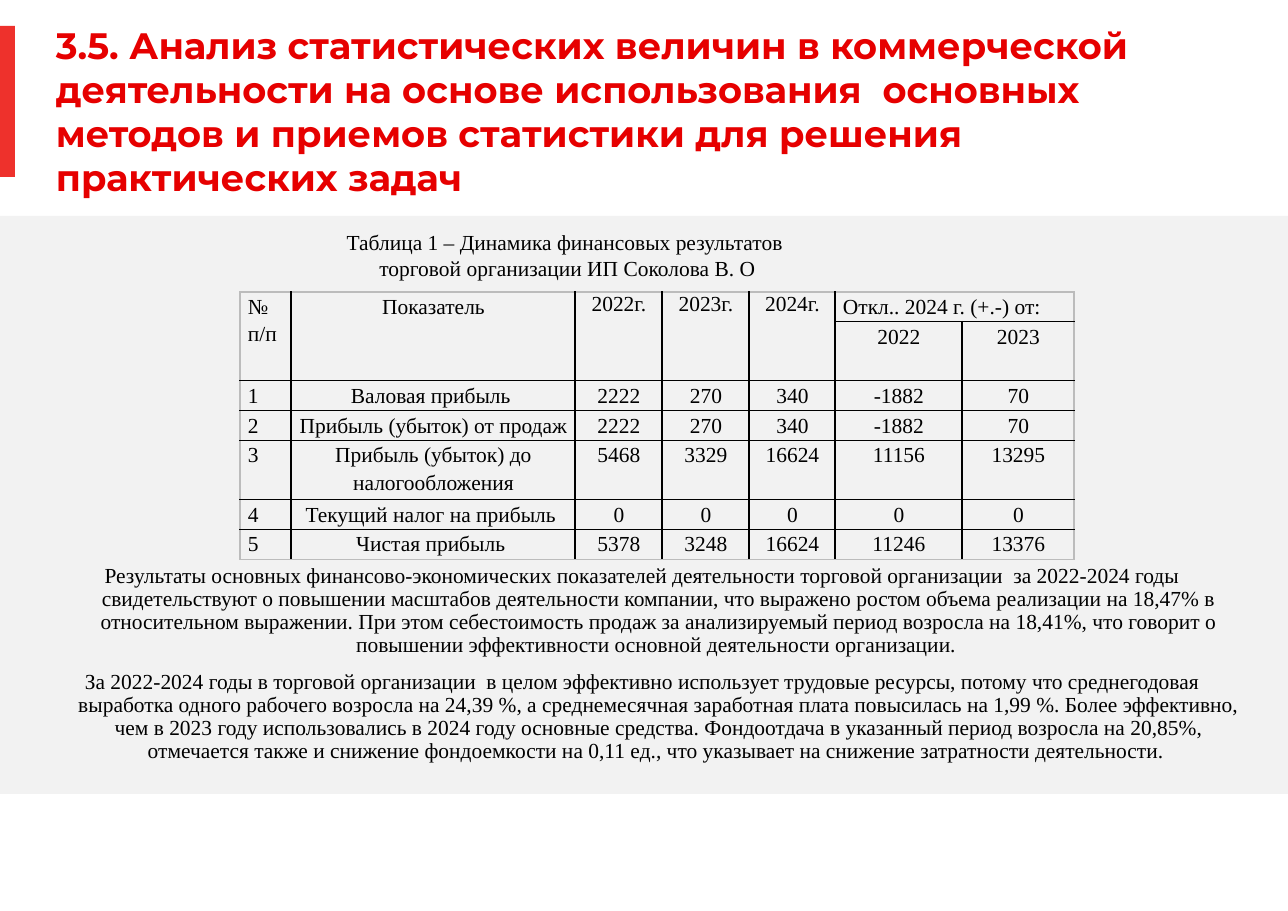
"""Build the slide on the financial results of a trading organisation."""
from lxml.etree import SubElement
from pptx import Presentation
from pptx.dml.color import RGBColor
from pptx.enum.shapes import MSO_SHAPE as Shape
from pptx.enum.text import MSO_ANCHOR as Anchor, PP_ALIGN as Align
from pptx.oxml.ns import qn
from pptx.util import Emu, Pt

PX = 914400 / 110.2
WHITE = RGBColor(0xFF, 0xFF, 0xFF)
BAND_GREY = RGBColor(0xF2, 0xF2, 0xF2)
FRAME_GREY = RGBColor(0xBC, 0xBC, 0xBC)
BAR_RED = RGBColor(0xEE, 0x31, 0x2C)
TITLE_RED = RGBColor(0xE6, 0x00, 0x00)
BLACK = RGBColor(0x00, 0x00, 0x00)
SERIF = "Times New Roman"

TITLE = (
    "3.5. Анализ статистических величин в коммерческой деятельности на основе "
    "использования  основных методов и приемов статистики для решения практических задач"
)
CAPTION = ["Таблица 1 – Динамика финансовых результатов ", "торговой организации ИП Соколова В. О"]
FINDINGS = [
    "Результаты основных финансово-экономических показателей деятельности торговой "
    "организации  за 2022-2024 годы свидетельствуют о повышении масштабов деятельности "
    "компании, что выражено ростом объема реализации на 18,47% в относительном выражении. "
    "При этом себестоимость продаж за анализируемый период возросла на 18,41%, что говорит "
    "о повышении эффективности основной деятельности организации. ",
    "За 2022-2024 годы в торговой организации  в целом эффективно использует трудовые "
    "ресурсы, потому что среднегодовая выработка одного рабочего возросла на 24,39 %, "
    "а среднемесячная заработная плата повысилась на 1,99 %. Более эффективно, чем в 2023 "
    "году использовались в 2024 году основные средства. Фондоотдача в указанный период "
    "возросла на 20,85%, отмечается также и снижение фондоемкости на 0,11 ед., "
    "что указывает на снижение затратности деятельности. ",
]
COLUMN_WIDTHS = [51, 284, 87, 87, 86, 127, 112]
ROW_HEIGHTS = [29, 59, 30, 29, 59, 30, 30]
RESULTS = [
    ["№ п/п", "Показатель", "2022г.", "2023г.", "2024г.", "Откл.. 2024 г. (+.-) от:", ""],
    ["", "", "", "", "", "2022", "2023"],
    ["1", "Валовая прибыль ", "2222", "270", "340", "-1882", "70"],
    ["2", "Прибыль (убыток) от продаж", "2222", "270", "340", "-1882", "70"],
    ["3", "Прибыль (убыток) до налогообложения", "5468", "3329", "16624", "11156", "13295"],
    ["4", "Текущий налог на прибыль ", "0", "0", "0", "0", "0"],
    ["5", "Чистая прибыль ", "5378", "3248", "16624", "11246", "13376"],
]


def px(length):
    """Turn whole pixels into EMU."""
    return Emu(round(length * PX))


def set_font(paragraph, name=SERIF, size=14, color=BLACK, bold=False):
    """Set the font of a whole paragraph."""
    font = paragraph.font
    font.name, font.size, font.bold = name, Pt(size), bold
    font.color.rgb = color


def add_block(slide, left, top, width, height, color):
    """Add a plain filled rectangle."""
    block = slide.shapes.add_shape(Shape.RECTANGLE, px(left), px(top), px(width), px(height))
    block.shadow.inherit = False
    block.fill.solid()
    block.fill.fore_color.rgb = color
    block.line.fill.background()


def add_text(slide, box, lines, insets=(0, 0), margin=0, indent=0, align=Align.CENTER,
             spacing=None, gap=0, **font):
    """Add a wrapped text box with one paragraph per line and return its frame."""
    frame = slide.shapes.add_textbox(*map(px, box)).text_frame
    frame.word_wrap = True
    frame.margin_left = frame.margin_right = px(insets[0])
    frame.margin_top = frame.margin_bottom = px(insets[1])
    for index, line in enumerate(lines):
        paragraph = frame.add_paragraph() if index else frame.paragraphs[0]
        paragraph.text = line
        paragraph.alignment = align
        paragraph.line_spacing = spacing
        if index and gap:
            paragraph.space_before = Pt(gap)
        properties = paragraph._p.get_or_add_pPr()
        properties.set("marL", str(px(margin)))
        properties.set("indent", str(px(indent)))
        set_font(paragraph, **font)
    return frame


def set_borders(cell, outer_sides):
    """Draw thin lines round a cell: grey on the table's edge, black inside."""
    properties = cell._tc.get_or_add_tcPr()
    for position, side in enumerate(("lnL", "lnR", "lnT", "lnB")):
        line = SubElement(properties, qn(f"a:{side}"), w=str(Pt(1)))
        fill = SubElement(line, qn("a:solidFill"))
        color = FRAME_GREY if side in outer_sides else BLACK
        SubElement(fill, qn("a:srgbClr"), val=str(color))
        properties.insert(position, line)


def fill_cell(cell, text, align, spacing):
    """Write and format one table cell."""
    cell.fill.background()
    cell.margin_left, cell.margin_right = px(8), px(7)
    cell.margin_top = cell.margin_bottom = 0
    paragraph = cell.text_frame.paragraphs[0]
    paragraph.text = text
    paragraph.alignment = align
    paragraph.line_spacing = spacing
    set_font(paragraph)


def add_results(slide, left, top):
    """Add the table of financial results with its two-row header."""
    last_row, last_column = len(ROW_HEIGHTS) - 1, len(COLUMN_WIDTHS) - 1
    results = slide.shapes.add_table(
        last_row + 1, last_column + 1, px(left), px(top),
        px(sum(COLUMN_WIDTHS)), px(sum(ROW_HEIGHTS))).table
    results.first_row = results.horz_banding = False
    for column, width in zip(results.columns, COLUMN_WIDTHS):
        column.width = px(width)
    for row, height in zip(results.rows, ROW_HEIGHTS):
        row.height = px(height)
    for r, values in enumerate(RESULTS):
        for c, value in enumerate(values):
            cell = results.cell(r, c)
            is_left = c == 0 or (r, c) == (0, 5)
            is_year = r == 0 and c in (2, 3, 4)
            fill_cell(cell, value, Align.LEFT if is_left else Align.CENTER,
                      1.0 if is_year else 1.15)
            edges = {"lnL": c == 0, "lnR": c == last_column, "lnT": r == 0, "lnB": r == last_row}
            set_borders(cell, [side for side, is_outer in edges.items() if is_outer])
    for c in range(5):
        results.cell(0, c).merge(results.cell(1, c))
    results.cell(0, 5).merge(results.cell(0, 6))
    results.cell(0, 5)._tc.tcPr.find(qn("a:lnR")).find(f".//{qn('a:srgbClr')}").set(
        "val", str(FRAME_GREY))


def main():
    """Build and save the slide."""
    deck = Presentation()
    deck.slide_width, deck.slide_height = px(1288), px(911)
    slide = deck.slides.add_slide(deck.slide_layouts[6])
    slide.background.fill.solid()
    slide.background.fill.fore_color.rgb = WHITE
    add_block(slide, 0, 216, 1288, 578, BAND_GREY)
    add_block(slide, 0, 26, 15, 151, BAR_RED)
    heading = add_text(slide, (56, 22, 1167, 177), [TITLE], align=Align.LEFT,
                       name="Montserrat", size=24, color=TITLE_RED, bold=True)
    heading.vertical_anchor = Anchor.MIDDLE
    add_text(slide, (265, 223, 551, 64), CAPTION, insets=(11, 6), indent=54)
    add_results(slide, 240, 292)
    add_text(slide, (24, 558, 1237, 282), FINDINGS, insets=(12, 7), margin=33, indent=-33,
             spacing=0.9, gap=8.6)
    deck.save("out.pptx")


if __name__ == "__main__":
    main()
